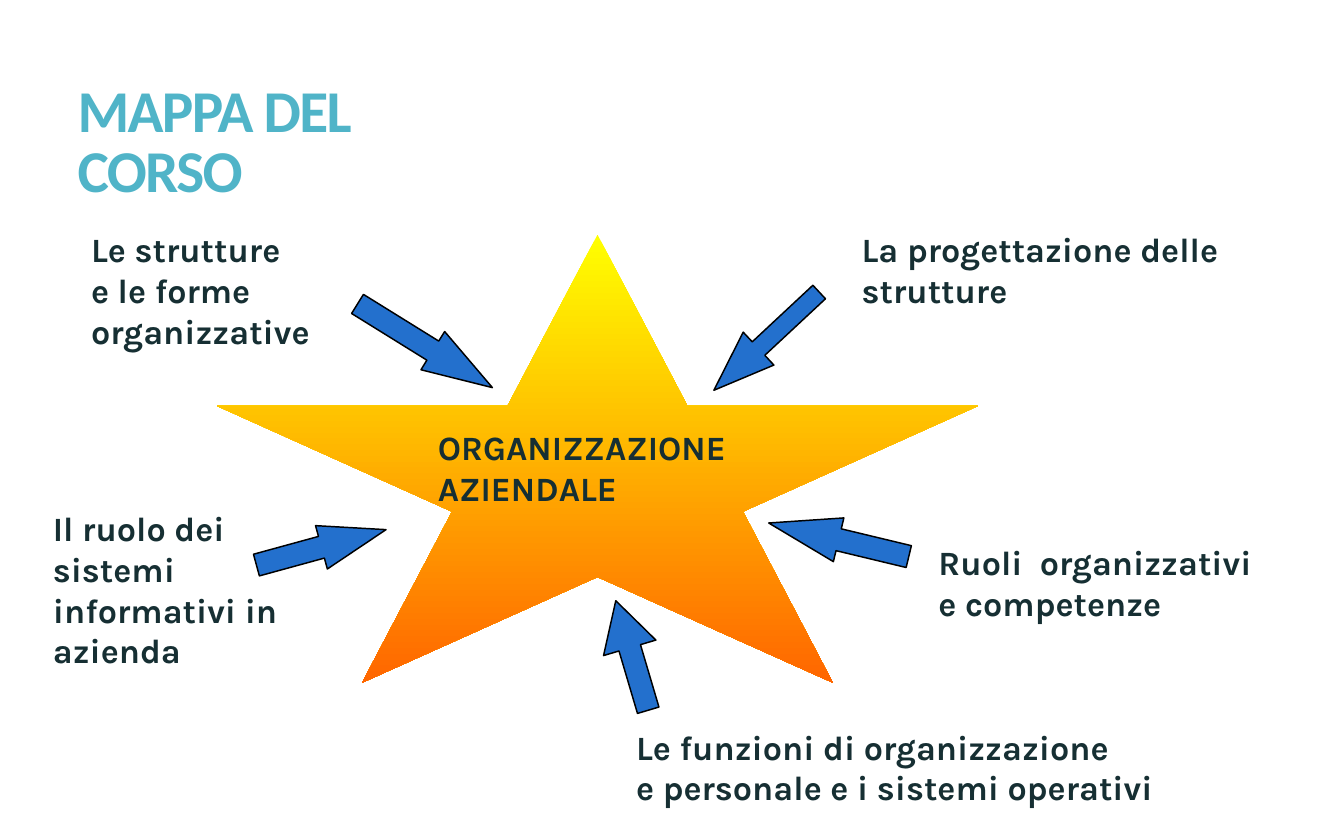
from pptx import Presentation
from pptx.dml.color import RGBColor
from pptx.enum import shapes, text
from pptx.util import Cm, Emu, Pt

WHITE = RGBColor(0xFF, 0xFF, 0xFF)
BLACK = RGBColor(0, 0, 0)
INK = RGBColor(0x16, 0x2F, 0x33)
TEAL = RGBColor(0x50, 0xB4, 0xC8)
BLUE = RGBColor(0x23, 0x70, 0xCD)
YELLOW = RGBColor(0xFF, 0xFF, 0x00)
ORANGE = RGBColor(0xFF, 0x66, 0x00)

SLIDE_SIZE = Emu(11522075), Emu(7200900)  # 16:10, about 32 by 20 cm

# Boxes are (left, top, width, height) in cm
TITLE = ("MAPPA DEL CORSO", (1.55, 1.85, 10.74, 1.78))
STAR = (5.16, 5.59, 18.14, 10.67)
LABELS = [
    ("Le strutture\ne le forme organizzative", (1.87, 5.3, 9.35, 2.92)),
    ("La progettazione delle strutture", (20.22, 5.3, 10.72, 2.06)),
    ("Le funzioni di organizzazione\ne personale e i sistemi operativi",
     (14.85, 17.14, 13.87, 2.95)),
    ("ORGANIZZAZIONE\nAZIENDALE", (10.13, 10.01, 9.25, 2.06)),
    ("Ruoli  organizzativi\ne competenze", (22.05, 12.75, 9.25, 2.06)),
    ("Il ruolo dei sistemi informativi in azienda", (0.96, 11.93, 6.05, 3.84)),
]
RIGHT = shapes.MSO_SHAPE.RIGHT_ARROW
LEFT = shapes.MSO_SHAPE.LEFT_ARROW
# Direction, box, rotation, shaft thickness, head length
ARROWS = [
    (RIGHT, (8.23, 7.7, 3.78, 1.07), 31.8, 0.5, 1.56),
    (LEFT, (16.54, 7.59, 3.43, 1.07), 317, 0.41, 1.36),
    (RIGHT, (6.05, 12.5, 3.2, 1.07), 344.7, 0.5, 1.49),
    (LEFT, (18.26, 12.32, 3.43, 1.07), 13.5, 0.5, 1.6),
    (LEFT, (13.69, 14.96, 2.72, 1.3), 73.5, 0.41, 0.9),
]


def cm(box):
    return [Cm(v) for v in box]


def add_text(s, words, box, font, size, color):
    tf = s.shapes.add_textbox(*cm(box)).text_frame
    tf.word_wrap = True
    tf.auto_size = text.MSO_AUTO_SIZE.SHAPE_TO_FIT_TEXT
    tf.margin_left = tf.margin_right = Cm(0.3)
    tf.margin_top = tf.margin_bottom = Cm(0.15)
    tf.text = words
    for p in tf.paragraphs:
        for r in p.runs:
            r.font.name, r.font.size, r.font.bold = font, Pt(size), True
            r.font.color.rgb = color
    return tf


def add_star(s):
    star = s.shapes.add_shape(shapes.MSO_SHAPE.STAR_5_POINT, *cm(STAR))
    star.shadow.inherit = False
    star.fill.gradient()
    star.fill.gradient_angle = 270
    for stop, color in zip(star.fill.gradient_stops, (YELLOW, ORANGE)):
        stop.color.rgb = color
    star.line.fill.background()


def add_arrow(s, kind, box, rotation, shaft, head):
    arrow = s.shapes.add_shape(kind, *cm(box))
    arrow.shadow.inherit = False
    arrow.rotation = rotation
    arrow.adjustments[0], arrow.adjustments[1] = shaft, head
    arrow.fill.solid()
    arrow.fill.fore_color.rgb = BLUE
    arrow.line.color.rgb = BLACK
    arrow.line.width = Pt(1)


def main():
    prs = Presentation()
    prs.slide_width, prs.slide_height = SLIDE_SIZE
    s = prs.slides.add_slide(prs.slide_layouts[6])
    s.background.fill.solid()
    s.background.fill.fore_color.rgb = WHITE

    add_star(s)
    for words, box in LABELS:
        add_text(s, words, box, "Karla", 23, INK)
    for arrow in ARROWS:
        add_arrow(s, *arrow)

    p = add_text(s, *TITLE, "Calibri", 40, TEAL).paragraphs[0]
    p.line_spacing = 0.85
    for r in p.runs:
        r.font._element.set("spc", "-110")

    prs.save("out.pptx")


if __name__ == "__main__":
    main()
